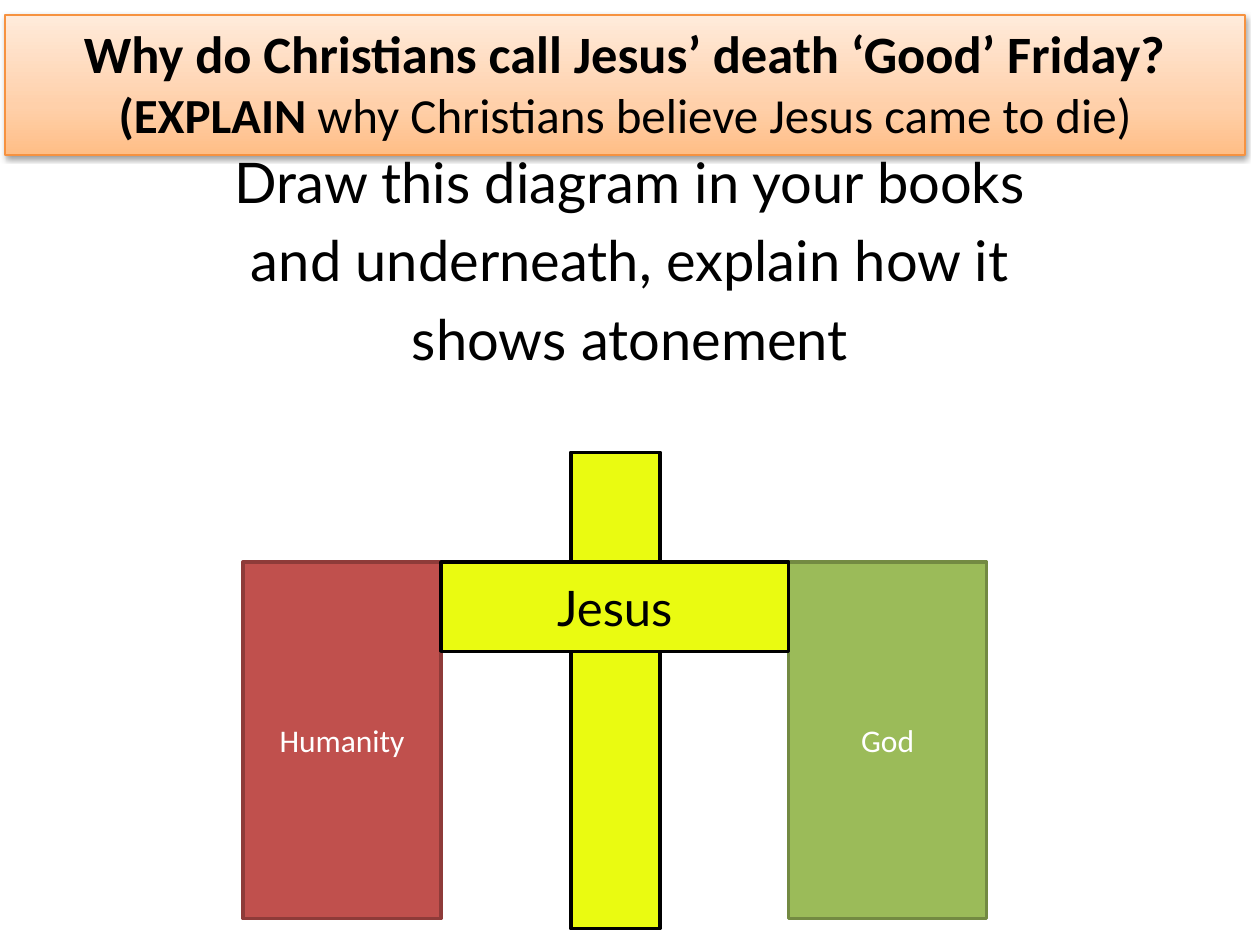
"""Build the Good Friday slide with its atonement diagram."""
from lxml import etree
from pptx import Presentation
from pptx.dml.color import RGBColor
from pptx.enum.shapes import MSO_SHAPE
from pptx.enum.text import MSO_ANCHOR, MSO_AUTO_SIZE, PP_ALIGN
from pptx.util import Inches, Pt

COLORS = {
    "black": "000000", "white": "FFFFFF", "yellow": "EAFB11",
    "red": "C0504D", "dark_red": "8E3B39",
    "green": "9BBB59", "dark_green": "738A42",
    "orange": "F69240", "low": "FFBE86", "mid": "FFD0AA", "high": "FFEBDB",
}
NS = "http://schemas.openxmlformats.org/drawingml/2006/main"

prs = Presentation()
prs.slide_width, prs.slide_height = Inches(10), Inches(7.5)
COL, ROW = prs.slide_width / 100, prs.slide_height / 75
s = prs.slides.add_slide(prs.slide_layouts[5])


def grid(x, y, w, h):
    return int(x * COL), int(y * ROW), int(w * COL), int(h * ROW)


def style(p, font, size, color):
    p.alignment = PP_ALIGN.CENTER
    p.font.name, p.font.size = font, Pt(size)
    p.font.color.rgb = RGBColor.from_string(COLORS[color])


title = s.shapes.title
title.left, title.top, title.width, title.height = grid(0.4, 1.2, 98.4, 11.1)
stops = "".join(
    f'<a:gs pos="{pos}000"><a:srgbClr val="{COLORS[name]}"/></a:gs>'
    for pos, name in ((0, "low"), (35, "mid"), (100, "high")))
spPr = title._element.spPr
spPr.append(etree.fromstring(
    f'<a:gradFill xmlns:a="{NS}" rotWithShape="1"><a:gsLst>{stops}</a:gsLst>'
    '<a:lin ang="16200000" scaled="1"/></a:gradFill>'))
title.line.color.rgb = RGBColor.from_string(COLORS["orange"])
title.line.width = Pt(0.75)
spPr.append(etree.fromstring(
    f'<a:effectLst xmlns:a="{NS}"><a:outerShdw blurRad="{Pt(3.1)}" dist="{Pt(1.6)}" '
    f'dir="5400000" rotWithShape="0"><a:srgbClr val="{COLORS["black"]}">'
    '<a:alpha val="38000"/></a:srgbClr></a:outerShdw></a:effectLst>'))

tf = title.text_frame
tf.auto_size, tf.vertical_anchor = MSO_AUTO_SIZE.NONE, MSO_ANCHOR.TOP
heading = (
    (30, (("Why do Christians call Jesus’ death ‘Good’ Friday?", True),)),
    (28, (("(EXPLAIN ", True), ("why Christians believe Jesus came to die)", False))),
)
for i, (size, runs) in enumerate(heading):
    p = tf.add_paragraph() if i else tf.paragraphs[0]
    style(p, "Calibri", size, "black")
    for text, bold in runs:
        r = p.add_run()
        r.text, r.font.bold = text, bold

tf = s.shapes.add_textbox(*grid(0, 11.2, 100, 53.9)).text_frame
tf.word_wrap = True
tf.text = "Draw this diagram in your books\nand underneath, explain how it\nshows atonement"
for p in tf.paragraphs:
    style(p, "Lato", 32, "black")
    p.space_before = Pt(6.4)

blocks = (
    (19.3, 44.6, 15.7, 28.3, "red", "dark_red", "Humanity", "Calibri", 18, "white"),
    (62.6, 44.6, 15.7, 28.3, "green", "dark_green", "God", "Calibri", 18, "white"),
    (45.3, 35.9, 7.1, 37.8, "yellow", "black", "", "Lato", 28, "black"),
    (35, 44.6, 27.6, 7.1, "yellow", "black", "Jesus", "Lato", 28, "black"),
)
for x, y, w, h, fill, line, text, font, size, color in blocks:
    sp = s.shapes.add_shape(MSO_SHAPE.RECTANGLE, *grid(x, y, w, h))
    sp.shadow.inherit = False
    sp.fill.solid()
    sp.fill.fore_color.rgb = RGBColor.from_string(COLORS[fill])
    sp.line.color.rgb = RGBColor.from_string(COLORS[line])
    sp.line.width = Pt(2)
    if text:
        tf = sp.text_frame
        tf.text, tf.vertical_anchor = text, MSO_ANCHOR.MIDDLE
        style(tf.paragraphs[0], font, size, color)

prs.save("out.pptx")
